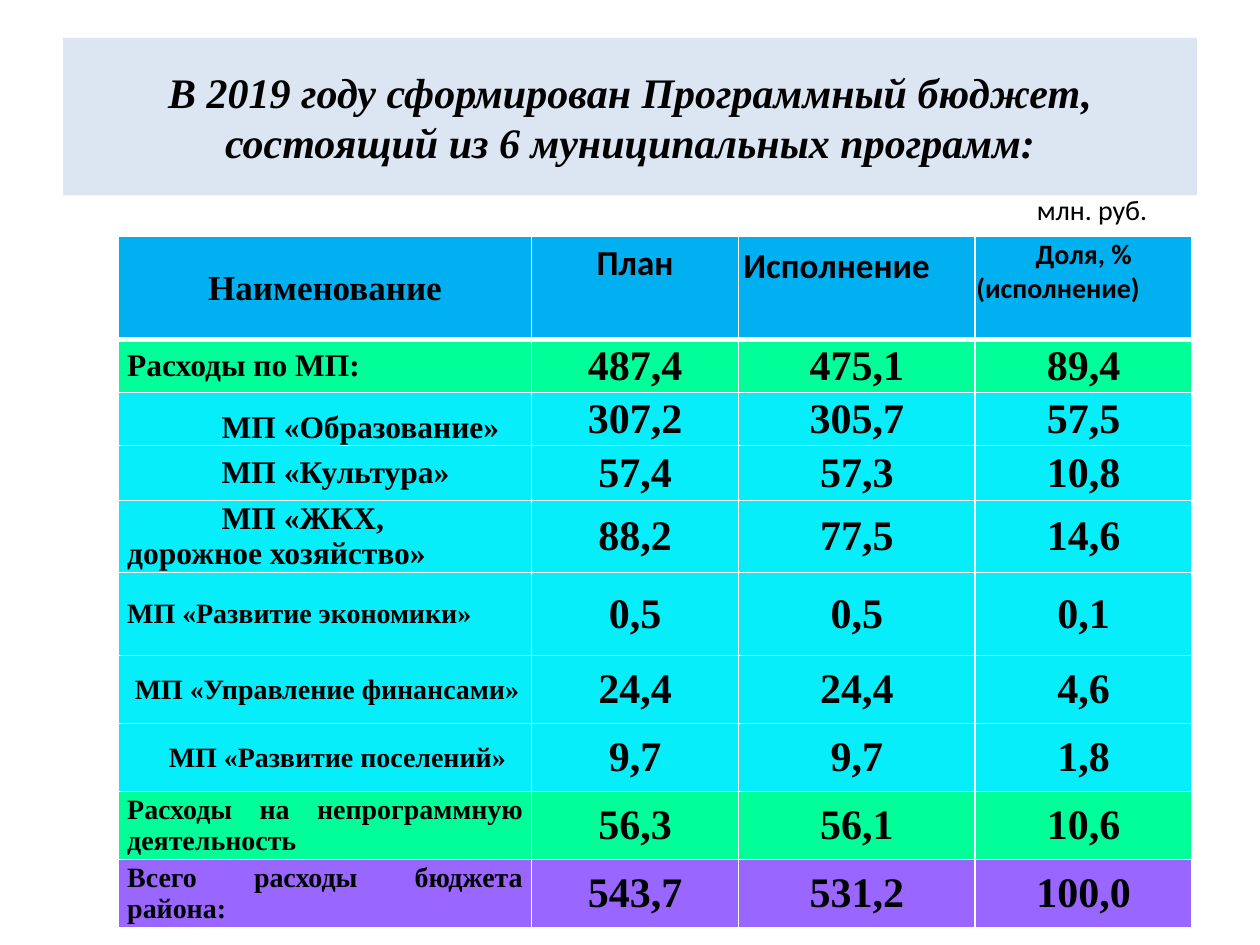
from dataclasses import dataclass

from lxml.etree import SubElement
from pptx import Presentation
from pptx.dml.color import RGBColor
from pptx.enum.text import MSO_ANCHOR, PP_ALIGN
from pptx.oxml.ns import qn
from pptx.util import Emu, Inches, Pt


@dataclass(frozen=True)
class Theme:
    serif: str = "Times New Roman"
    sans: str = "Calibri"
    ink: str = "000000"
    banner: str = "DCE6F2"
    header: str = "00B0F0"
    subtotal: str = "00FF99"
    program: str = "06EEFA"
    total: str = "9966FF"
    rule: str = "FFFFFF"
    large: int = 24
    heading: int = 20
    medium: int = 18
    small: int = 16


@dataclass(frozen=True)
class CellStyle:
    size: int
    font: str
    align: PP_ALIGN = PP_ALIGN.CENTER
    anchor: MSO_ANCHOR = MSO_ANCHOR.MIDDLE
    margins: tuple = (0.07, 0, 0.07, 0)  # left, top, right, bottom in inches
    indent: float = 0


class BudgetSlide:
    def __init__(self, deck, theme):
        self.deck, self.theme = deck, theme
        self.slide = deck.slides.add_slide(deck.slide_layouts[5])

    def box(self, left, top, width, height):
        """Turn shares of the slide into lengths."""
        w, h = self.deck.slide_width, self.deck.slide_height
        return [Emu(round(v)) for v in (left * w, top * h, width * w, height * h)]

    def format_runs(self, frame, size, font, align, bold=False, italic=False):
        for paragraph in frame.paragraphs:
            paragraph.alignment = align
            for run in paragraph.runs:
                run.font.size, run.font.name = Pt(size), font
                run.font.bold, run.font.italic = bold, italic
                run.font.color.rgb = RGBColor.from_string(self.theme.ink)

    def title(self, text, *place):
        banner = self.slide.shapes.title
        banner.left, banner.top, banner.width, banner.height = self.box(*place)
        banner.fill.solid()
        banner.fill.fore_color.rgb = RGBColor.from_string(self.theme.banner)
        frame = banner.text_frame
        frame.text = text
        frame.vertical_anchor = MSO_ANCHOR.MIDDLE
        self.format_runs(frame, self.theme.large, self.theme.serif,
                         PP_ALIGN.CENTER, bold=True, italic=True)

    def label(self, text, *place):
        frame = self.slide.shapes.add_textbox(*self.box(*place)).text_frame
        frame.word_wrap = True
        frame.text = text
        self.format_runs(frame, self.theme.small, self.theme.sans, PP_ALIGN.LEFT)

    def table(self, rows, column_widths, row_heights, left, top):
        """Draw rows of (fill, [(text, CellStyle), ...]); sizes are slide shares."""
        place = self.box(left, top, sum(column_widths), sum(row_heights))
        table = self.slide.shapes.add_table(
            len(rows), len(column_widths), *place).table
        for column, share in zip(table.columns, column_widths):
            column.width = Emu(round(share * self.deck.slide_width))
        for row, share in zip(table.rows, row_heights):
            row.height = Emu(round(share * self.deck.slide_height))
        for r, (fill, cells) in enumerate(rows):
            for c, (text, style) in enumerate(cells):
                self.cell(table.cell(r, c), text, style, fill)
                self.borders(table.cell(r, c), {"lnT": 3 if r == 1 else 1,
                                                "lnB": 3 if r == 0 else 1})

    def cell(self, cell, text, style, fill):
        cell.fill.solid()
        cell.fill.fore_color.rgb = RGBColor.from_string(fill)
        cell.vertical_anchor = style.anchor
        (cell.margin_left, cell.margin_top,
         cell.margin_right, cell.margin_bottom) = map(Inches, style.margins)
        frame = cell.text_frame
        frame.text = text
        self.format_runs(frame, style.size, style.font, style.align, bold=True)
        if style.indent:
            properties = frame.paragraphs[0]._p.get_or_add_pPr()
            properties.set("marL", "0")
            properties.set("indent", str(Inches(style.indent)))

    def borders(self, cell, horizontal):
        properties = cell._tc.get_or_add_tcPr()
        widths = {"lnL": 1, "lnR": 1, **horizontal}
        for position, side in enumerate(("lnL", "lnR", "lnT", "lnB")):
            line = SubElement(properties, qn(f"a:{side}"), w=str(Pt(widths[side])))
            solid = SubElement(line, qn("a:solidFill"))
            SubElement(solid, qn("a:srgbClr"), val=self.theme.rule)
            properties.insert(position, line)


def budget_rows(theme):
    tight = (0.01, 0.01, 0.01, 0)

    def name(size, indent=0, anchor=MSO_ANCHOR.MIDDLE):
        align = PP_ALIGN.JUSTIFY if size == theme.small else PP_ALIGN.LEFT
        return CellStyle(size, theme.serif, align, anchor, indent=indent)

    header = [
        ("Наименование", CellStyle(theme.heading, theme.serif, margins=tight)),
        ("План", CellStyle(theme.heading, theme.sans, anchor=MSO_ANCHOR.TOP,
                           margins=(0.1, 0.05, 0.1, 0.05))),
        ("Исполнение", CellStyle(theme.heading, theme.sans, PP_ALIGN.LEFT,
                                 MSO_ANCHOR.TOP, (0.04, 0.07, 0.01, 0))),
        ("Доля, % (исполнение)", CellStyle(theme.small, theme.sans, PP_ALIGN.LEFT,
                                           MSO_ANCHOR.TOP, tight, 0.47)),
    ]
    programs = [
        ("Расходы по МП:", name(theme.medium), theme.subtotal, "487,4 475,1 89,4"),
        ("МП «Образование»", name(theme.medium, 0.75, MSO_ANCHOR.BOTTOM),
         theme.program, "307,2 305,7 57,5"),
        ("МП «Культура»", name(theme.medium, 0.75), theme.program, "57,4 57,3 10,8"),
        ("МП «ЖКХ,\vдорожное хозяйство»", name(theme.medium, 0.75),
         theme.program, "88,2 77,5 14,6"),
        ("МП «Развитие экономики»", name(theme.small), theme.program, "0,5 0,5 0,1"),
        ("МП «Управление финансами»", name(theme.small, 0.06),
         theme.program, "24,4 24,4 4,6"),
        ("МП «Развитие поселений»", name(theme.small, 0.33),
         theme.program, "9,7 9,7 1,8"),
        ("Расходы на непрограммную деятельность", name(theme.small),
         theme.subtotal, "56,3 56,1 10,6"),
        ("Всего расходы бюджета района:", name(theme.small),
         theme.total, "543,7 531,2 100,0"),
    ]
    amount = CellStyle(theme.large, theme.serif)
    return [(theme.header, header)] + [
        (fill, [(program, style)] + [(value, amount) for value in values.split()])
        for program, style, fill, values in programs]


def main():
    deck = Presentation()
    deck.slide_width, deck.slide_height = Inches(10), Inches(7.5)
    theme = Theme()
    page = BudgetSlide(deck, theme)
    page.title("В 2019 году сформирован Программный бюджет, "
               "состоящий из 6 муниципальных программ:", 0.05, 0.04, 0.9, 1 / 6)
    heights = [0.82, 0.42, 0.42, 0.44, 0.57, 0.66] + [0.54] * 4
    page.table(budget_rows(theme), [0.328, 0.164, 0.188, 0.172],
               [height / 7.5 for height in heights], 0.094, 0.25)
    page.label("млн. руб.", 0.813, 0.197, 0.148, 0.05)
    deck.save("out.pptx")


if __name__ == "__main__":
    main()
